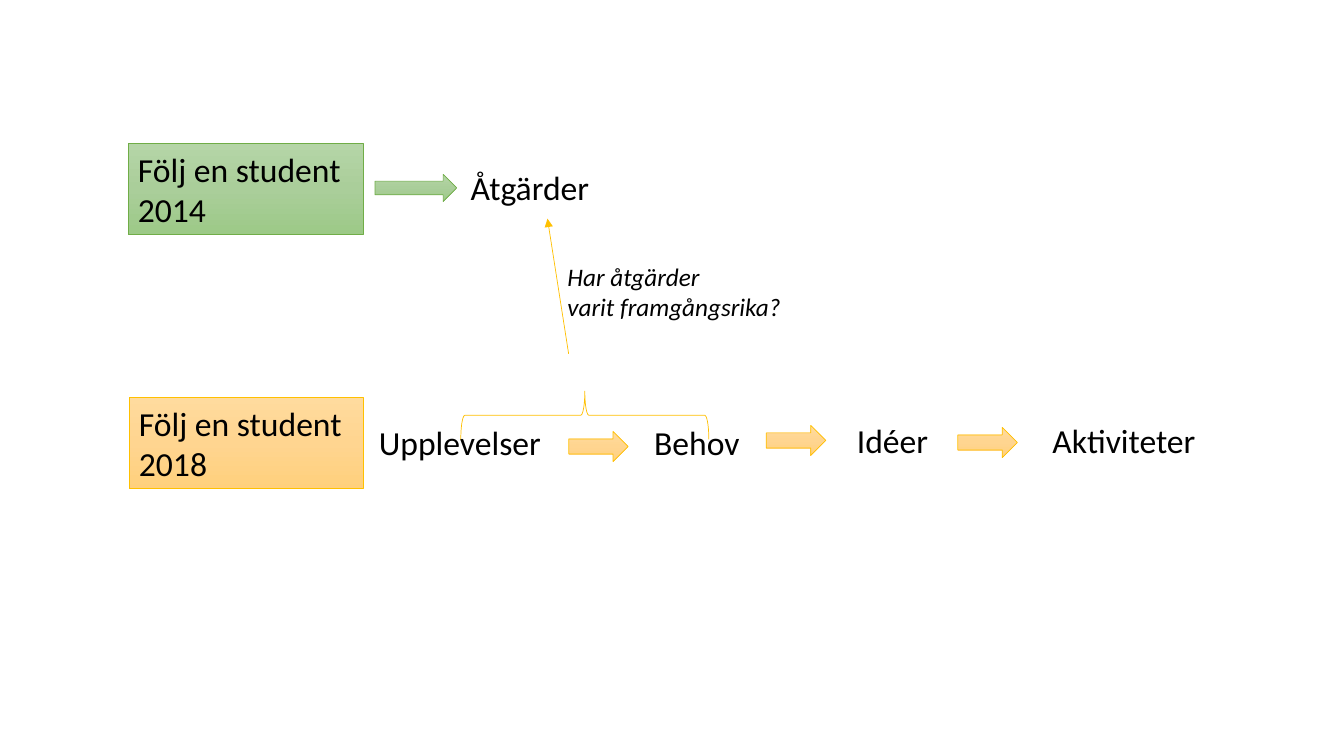
from copy import deepcopy

from lxml import etree
from pptx import Presentation
from pptx.dml.color import RGBColor
from pptx.enum import shapes, text
from pptx.oxml.ns import qn
from pptx.util import Inches, Pt

BLACK = RGBColor(0x00, 0x00, 0x00)
GREEN_LINE = RGBColor(0x70, 0xAD, 0x47)
GOLD_LINE = RGBColor(0xFF, 0xC0, 0x00)
GREEN = (RGBColor(0xB5, 0xD5, 0xA7), RGBColor(0xAA, 0xCE, 0x9A),
         RGBColor(0x9C, 0xC9, 0x87), GREEN_LINE)
GOLD = (RGBColor(0xFF, 0xDB, 0x9E), RGBColor(0xFF, 0xD5, 0x90),
        RGBColor(0xFF, 0xD0, 0x7C), GOLD_LINE)

# Content: places are left, top, width, height in inches
SURVEYS = [
    ("Följ en student 2014", (1.27, 1.42, 2.33, 0.91), GREEN),
    ("Följ en student 2018", (1.28, 3.94, 2.32, 0.91), GOLD),
]
STEPS = [
    ("Åtgärder", (4.57, 1.61, 1.79, 0.5)),
    ("Upplevelser", (3.66, 4.14, 1.86, 0.5)),
    ("Behov", (6.39, 4.14, 1.2, 0.5)),
    ("Idéer", (8.4, 4.12, 1.19, 0.5)),
    ("Aktiviteter", (10.34, 4.12, 1.95, 0.5)),
]
ARROWS = [
    ((3.72, 1.73, 0.81, 0.27), GREEN),
    ((5.64, 4.28, 0.59, 0.3), GOLD),
    ((7.6, 4.22, 0.59, 0.3), GOLD),
    ((9.5, 4.24, 0.59, 0.3), GOLD),
]
QUESTION = "Har åtgärder\nvarit framgångsrika?"
QUESTION_AT = (5.53, 2.54, 2.44, 0.71)
LINK_FROM, LINK_TO = (5.64, 3.51), (5.43, 2.17)
BRACE_AT = (5.56, 2.89, 0.48, 2.46)

prs = Presentation()
prs.slide_width, prs.slide_height = Inches(13.33), Inches(7.5)
s = prs.slides.add_slide(prs.slide_layouts[6])


def inches(values):
    return [Inches(v) for v in values]


def set_line(sp, color):
    sp.line.color.rgb = color
    sp.line.width = Pt(0.5)


def add_gradient_shape(kind, at, colors):
    sp = s.shapes.add_shape(kind, *inches(at))
    sp.shadow.inherit = False
    sp.fill.gradient()
    sp.fill.gradient_angle = 270
    stop_list = sp._element.spPr.find(qn("a:gradFill")).find(qn("a:gsLst"))
    stop_list.insert(1, deepcopy(stop_list[0]))
    for stop, position, color in zip(sp.fill.gradient_stops, (0, 0.5, 1), colors):
        stop.position = position
        stop.color.rgb = color
    set_line(sp, colors[3])
    return sp


def set_text(sp, words, size=24, italic=None):
    tf = sp.text_frame
    tf.word_wrap = True
    tf.text = words
    for p in tf.paragraphs:
        p.alignment = text.PP_ALIGN.LEFT
        for r in p.runs:
            r.font.name = "Calibri"
            r.font.size = Pt(size)
            r.font.italic = italic
            r.font.color.rgb = BLACK


# Survey boxes, steps and block arrows
for words, at, colors in SURVEYS:
    set_text(add_gradient_shape(shapes.MSO_SHAPE.RECTANGLE, at, colors), words)
for words, at in STEPS:
    set_text(s.shapes.add_textbox(*inches(at)), words)
for at, colors in ARROWS:
    add_gradient_shape(shapes.MSO_SHAPE.RIGHT_ARROW, at, colors)

# Question beside the link back to the measures
set_text(s.shapes.add_textbox(*inches(QUESTION_AT)), QUESTION, 18, True)
link = s.shapes.add_connector(shapes.MSO_CONNECTOR.STRAIGHT,
                              *inches(LINK_FROM + LINK_TO))
set_line(link, GOLD_LINE)
etree.SubElement(link.line._get_or_add_ln(), qn("a:tailEnd"), type="triangle")
etree.SubElement(link._element.spPr, qn("a:effectLst"))

# Brace over experiences and needs
brace = s.shapes.add_shape(shapes.MSO_SHAPE.LEFT_BRACE, *inches(BRACE_AT))
brace.shadow.inherit = False
brace.rotation = 90
brace.fill.background()
set_line(brace, GOLD_LINE)

prs.save("out.pptx")
